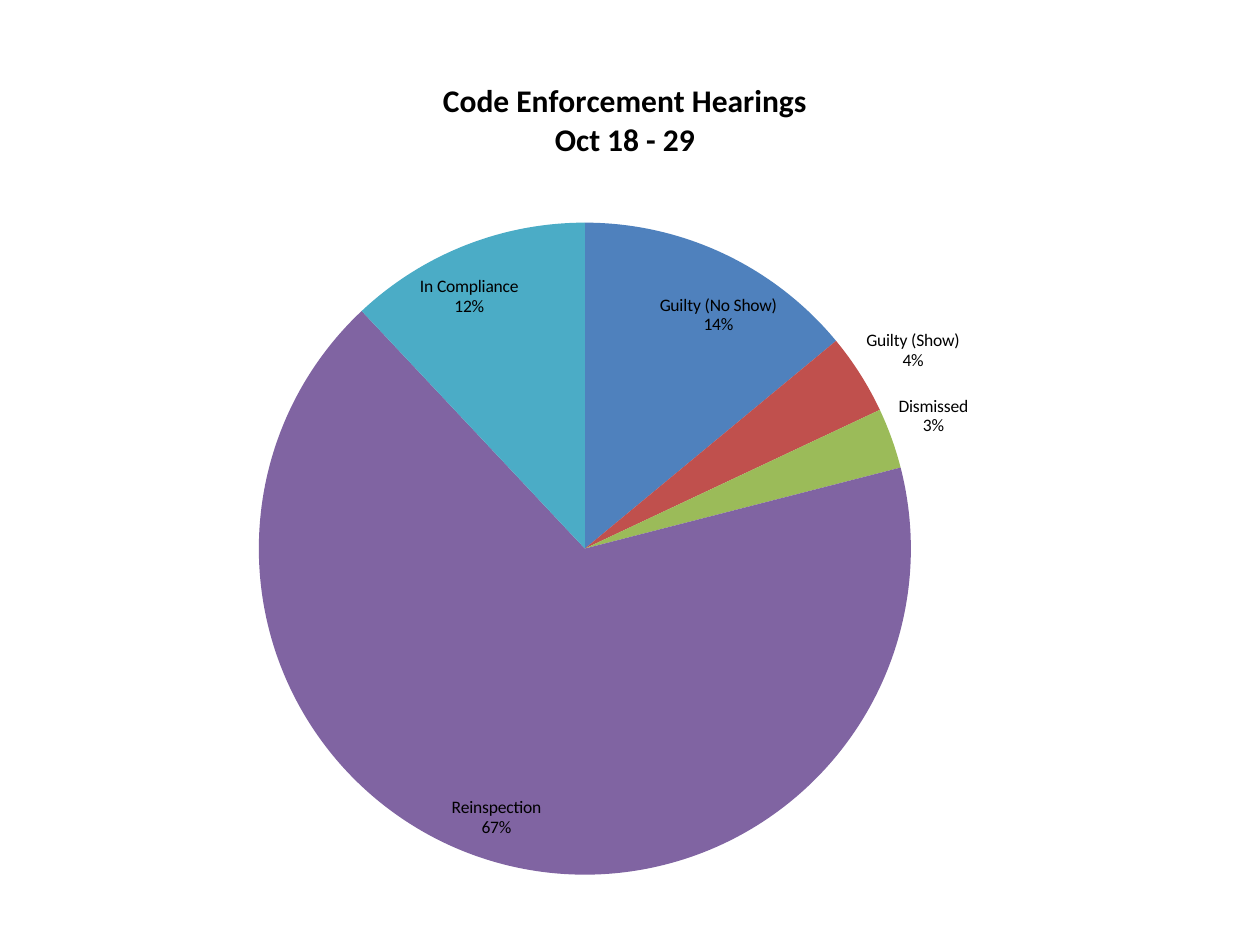
from dataclasses import dataclass

from lxml import etree
from pptx import Presentation
from pptx.chart.data import CategoryChartData
from pptx.dml.color import RGBColor
from pptx.enum.chart import XL_CHART_TYPE, XL_LABEL_POSITION
from pptx.oxml.ns import qn
from pptx.util import Inches, Pt

PIE = XL_CHART_TYPE.PIE
BEST_FIT = XL_LABEL_POSITION.BEST_FIT
BLANK_LAYOUT = 6

TITLE_LINES = ["Code Enforcement Hearings", "Oct 18 - 29"]
OUTCOMES = [  # outcome, share of hearings in percent, slice colour
    ("Guilty (No Show)", 14, "4F81BD"),
    ("Guilty (Show)", 4, "C0504D"),
    ("Dismissed", 3, "9BBB59"),
    ("Reinspection", 67, "8064A2"),
    ("In Compliance", 12, "4BACC6"),
]
CHART_BOX = (0.42, 0.42, 9.08, 6.67)  # left, top, width, height in inches
PIE_AREA = {"x": 0.18, "y": 0.2, "w": 0.57, "h": 0.78}  # shares of the chart


@dataclass(frozen=True)
class Theme:
    font: str = "Calibri"
    text: str = "000000"
    title_size: int = 18
    label_size: int = 10


THEME = Theme()


def style_font(font, size, bold=False):
    font.name = THEME.font
    font.size = Pt(size)
    font.bold = bold
    font.color.rgb = RGBColor.from_string(THEME.text)


def add_title(chart):
    frame = chart.chart_title.text_frame
    frame.text = "\n".join(TITLE_LINES)
    for paragraph in frame.paragraphs:
        style_font(paragraph.font, THEME.title_size, bold=True)
    chart.chart_title.include_in_layout = False


def place_pie(chart):
    """Give the plot area a fixed inner position within the chart."""
    plot_area = chart.plots[0]._element.getparent()
    for old_layout in plot_area.findall(qn("c:layout")):
        plot_area.remove(old_layout)
    layout = etree.Element(qn("c:layout"))
    manual = etree.SubElement(layout, qn("c:manualLayout"))
    settings = {"layoutTarget": "inner", "xMode": "edge", "yMode": "edge", **PIE_AREA}
    for name, value in settings.items():
        etree.SubElement(manual, qn(f"c:{name}")).set("val", str(value))
    plot_area.insert(0, layout)


def add_pie(slide):
    names, shares, colors = zip(*OUTCOMES)
    data = CategoryChartData()
    data.categories = names
    data.add_series("Series 1", shares)
    chart = slide.shapes.add_chart(PIE, *map(Inches, CHART_BOX), data).chart
    chart.has_legend = False
    style_font(chart.font, THEME.label_size)
    add_title(chart)
    place_pie(chart)

    plot = chart.plots[0]
    plot.vary_by_categories = True
    for index, color in enumerate(colors):
        fill = plot.series[0].points[index].format.fill
        fill.solid()
        fill.fore_color.rgb = RGBColor.from_string(color)

    labels = plot.series[0].data_labels
    labels.show_category_name = True
    labels.show_percentage = True
    labels.show_value = False
    labels.number_format = "0%"
    labels.number_format_is_linked = False
    labels.position = BEST_FIT
    style_font(labels.font, THEME.label_size)
    separator = etree.Element(qn("c:separator"))
    separator.text = "\n"
    labels._element.find(qn("c:showBubbleSize")).addnext(separator)


def main():
    presentation = Presentation()
    presentation.slide_width = Inches(10)
    presentation.slide_height = Inches(7.5)
    slide = presentation.slides.add_slide(presentation.slide_layouts[BLANK_LAYOUT])
    add_pie(slide)
    presentation.save("out.pptx")


if __name__ == "__main__":
    main()
